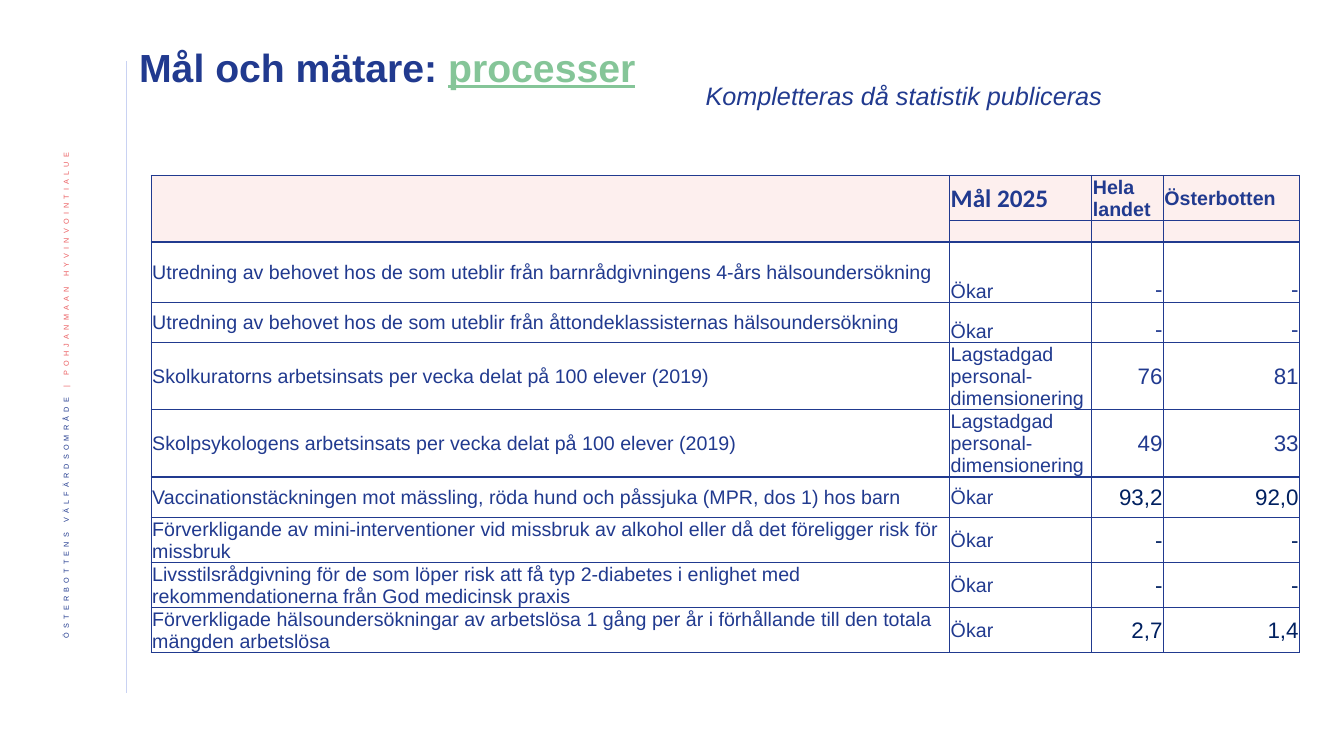
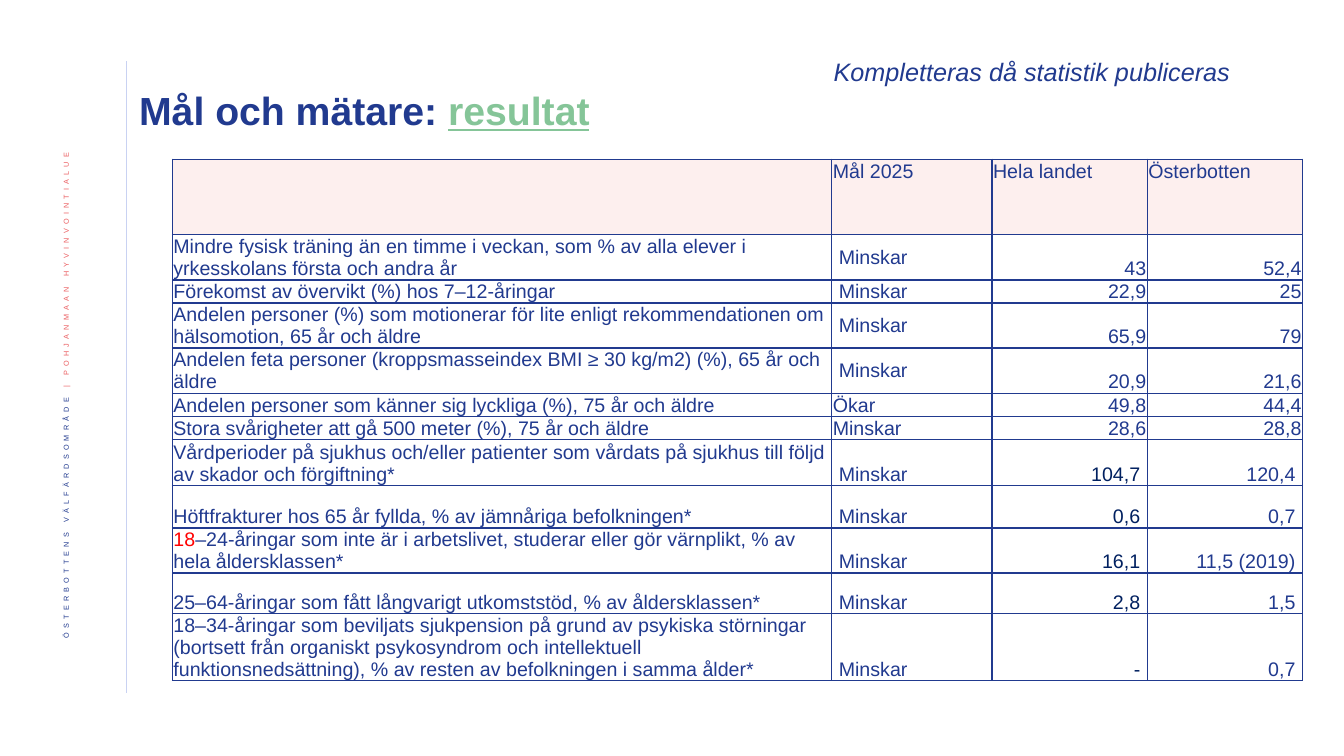
from dataclasses import dataclass
from typing import Any

from lxml import etree
from pptx import Presentation
from pptx.dml.color import RGBColor
from pptx.enum.shapes import MSO_CONNECTOR
from pptx.enum.text import MSO_ANCHOR, MSO_AUTO_SIZE, PP_ALIGN
from pptx.oxml.ns import qn
from pptx.util import Inches, Pt

LEFT, RIGHT = PP_ALIGN.LEFT, PP_ALIGN.RIGHT
TOP, MIDDLE, BOTTOM = MSO_ANCHOR.TOP, MSO_ANCHOR.MIDDLE, MSO_ANCHOR.BOTTOM
STRAIGHT = MSO_CONNECTOR.STRAIGHT
FIXED_SIZE = MSO_AUTO_SIZE.NONE

NAVY = RGBColor(0x21, 0x3A, 0x8F)
DARK = RGBColor(0x00, 0x20, 0x60)
GREEN = RGBColor(0x85, 0xC5, 0x98)
CORAL = RGBColor(0xEB, 0x5C, 0x5F)
RED = RGBColor(0xFF, 0x00, 0x00)
PINK = RGBColor(0xFD, 0xEF, 0xEE)
PALE_BLUE = RGBColor(0xC9, 0xD2, 0xF2)

FONT = "Arial"
RULE_X = 1.25
CELL_MARGIN = 0.01
PADDING = 0.06
BORDER_TAGS = ("a:lnL", "a:lnR", "a:lnT", "a:lnB")
NOTE = "Kompletteras då statistik publiceras"


@dataclass(frozen=True)
class Heading:
    text: str
    font: str = FONT
    size: int = 14
    bold: bool = False


@dataclass(frozen=True)
class Measure:
    height: float
    label: str
    goal: str
    values: tuple[str, str]
    goal_anchor: Any = MIDDLE
    value_anchor: Any = MIDDLE
    colours: tuple[RGBColor, RGBColor] = (NAVY, NAVY)
    goal_padding: float = 0
    value_padding: float = 0
    red_start: str = ""


@dataclass(frozen=True)
class MeasurePage:
    topic: str
    title_box: tuple[float, float, float, float]
    note_at: tuple[float, float]
    table_at: tuple[float, float]
    columns: tuple[float, ...]
    header_rows: tuple[float, ...]
    header_anchor: Any
    label_anchor: Any
    value_size: int
    headings: tuple[Heading, ...]
    measures: tuple[Measure, ...]


def dashes(height: float, label: str, anchor: Any, colour: RGBColor) -> Measure:
    """A process measure that has no statistics yet."""
    return Measure(height, label, "Ökar", ("-", "-"), anchor, anchor, (colour, colour))


def falling(height: float, label: str, *values: str) -> Measure:
    """A result measure from the surveys, meant to fall."""
    return Measure(height, label, "Minskar", values, MIDDLE, BOTTOM, goal_padding=PADDING)


def padded(height: float, label: str, *values: str, red_start: str = "") -> Measure:
    """A result measure from the registers, with padded figures."""
    return Measure(height, label, "Minskar", values, BOTTOM, BOTTOM, (DARK, NAVY),
                   PADDING, PADDING, red_start)


PROCESSES = MeasurePage(
    topic="processer",
    title_box=(1.28, 0.43, 5.61, 1.04),
    note_at=(6.9, 0.75),
    table_at=(1.5, 1.74),
    columns=(7.92, 1.41, 0.71, 1.35),
    header_rows=(0.45, 0.21),
    header_anchor=MIDDLE,
    label_anchor=MIDDLE,
    value_size=16,
    headings=(Heading("Mål 2025", "Calibri", 18, True),
              Heading("Hela landet", bold=True),
              Heading("Österbotten", bold=True)),
    measures=(
        dashes(0.6, "Utredning av behovet hos de som uteblir från barnrådgivningens "
               "4-års hälsoundersökning", BOTTOM, NAVY),
        dashes(0.4, "Utredning av behovet hos de som uteblir från åttondeklassisternas "
               "hälsoundersökning", BOTTOM, NAVY),
        Measure(0.66, "Skolkuratorns arbetsinsats per vecka delat på 100 elever (2019)",
                "Lagstadgad personal-dimensionering", ("76", "81")),
        Measure(0.66, "Skolpsykologens arbetsinsats per vecka delat på 100 elever (2019)",
                "Lagstadgad personal-dimensionering", ("49", "33")),
        Measure(0.4, "Vaccinationstäckningen mot mässling, röda hund och påssjuka "
                "(MPR, dos 1) hos barn", "Ökar", ("93,2", "92,0"), colours=(DARK, DARK)),
        dashes(0.44, "Förverkligande av mini-interventioner vid missbruk av alkohol "
               "eller då det föreligger risk för missbruk", MIDDLE, DARK),
        dashes(0.44, "Livsstilsrådgivning för de som löper risk att få typ 2-diabetes "
               "i enlighet med rekommendationerna från God medicinsk praxis", MIDDLE, DARK),
        Measure(0.44, "Förverkligade hälsoundersökningar av arbetslösa 1 gång per år "
                "i förhållande till den totala mängden arbetslösa", "Ökar",
                ("2,7", "1,4"), colours=(DARK, DARK)),
    ),
)

RESULTS = MeasurePage(
    topic="resultat",
    title_box=(1.28, 0.86, 5.18, 1.03),
    note_at=(8.17, 0.51),
    table_at=(1.71, 1.58),
    columns=(6.54, 1.59, 1.54, 1.54),
    header_rows=(0.75,),
    header_anchor=TOP,
    label_anchor=BOTTOM,
    value_size=14,
    headings=(Heading("Mål 2025"), Heading("Hela landet"), Heading("Österbotten")),
    measures=(
        falling(0.44, "Mindre fysisk träning än en timme i veckan, som % av alla elever "
                "i yrkesskolans första och andra år", "43", "52,4"),
        falling(0.22, "Förekomst av övervikt (%) hos 7–12-åringar", "22,9", "25"),
        falling(0.44, "Andelen personer (%) som motionerar för lite enligt "
                "rekommendationen om hälsomotion, 65 år och äldre", "65,9", "79"),
        falling(0.44, "Andelen feta personer (kroppsmasseindex BMI ≥ 30 kg/m2) (%), "
                "65 år och äldre", "20,9", "21,6"),
        Measure(0.22, "Andelen personer som känner sig lyckliga (%), 75 år och äldre",
                "Ökar", ("49,8", "44,4"), MIDDLE, BOTTOM),
        Measure(0.22, "Stora svårigheter att gå 500 meter (%), 75 år och äldre",
                "Minskar", ("28,6", "28,8"), BOTTOM, BOTTOM),
        padded(0.46, "Vårdperioder på sjukhus och/eller patienter som vårdats på sjukhus "
               "till följd av skador och förgiftning*", "104,7", "120,4"),
        padded(0.42, "Höftfrakturer hos 65 år fyllda, % av jämnåriga befolkningen*",
               "0,6", "0,7"),
        padded(0.44, "–24-åringar som inte är i arbetslivet, studerar eller gör "
               "värnplikt, % av hela åldersklassen*", "16,1", "11,5 (2019)", red_start="18"),
        padded(0.4, "25–64-åringar som fått långvarigt utkomststöd, % av åldersklassen*",
               "2,8", "1,5"),
        padded(0.67, "18–34-åringar som beviljats sjukpension på grund av psykiska "
               "störningar (bortsett från organiskt psykosyndrom och intellektuell "
               "funktionsnedsättning), % av resten av befolkningen i samma ålder*",
               "-", "0,7"),
    ),
)


def add_span(para: Any, text: str, colour: RGBColor = NAVY, **formats: Any) -> Any:
    span = para.add_run()
    span.text = text
    for name, value in {"name": FONT, "bold": False, **formats}.items():
        setattr(span.font, name, value)
    span.font.color.rgb = colour
    return span


# Shared parts
def add_side_band(page: Any, layout: Any) -> None:
    """Draw the rule and the vertical name, then hand them to the layout."""
    rule = page.shapes.add_connector(STRAIGHT, Inches(RULE_X), Inches(0.61),
                                     Inches(RULE_X), Inches(6.88))
    rule.line.color.rgb = PALE_BLUE
    rule.line.width = Pt(0.5)
    etree.SubElement(rule._element.spPr, qn("a:effectLst"))

    box = page.shapes.add_textbox(*map(Inches, (0.42, 1.42, 0.52, 5.73)))
    frame = box.text_frame
    frame.word_wrap = True
    frame.vertical_anchor = MIDDLE
    frame._txBody.bodyPr.set("vert", "vert270")
    para = frame.paragraphs[0]
    para.alignment = RIGHT
    para.line_spacing = 0.9
    for text, colour in (("ÖSTERBOTTENS VÄLFÄRDSOMRÅDE ", NAVY),
                         ("| POHJANMAAN HYVINVOINTIALUE", CORAL)):
        span = add_span(para, text, colour, size=Pt(9))
        span.font._element.set("baseline", "30000")
        span.font._element.set("spc", "300")

    for shape in (rule, box):
        layout.shapes._spTree.append(shape._element)


def fill_title(page: Any, content: MeasurePage) -> None:
    title = page.shapes.title
    sides = ("left", "top", "width", "height")
    for side, length in zip(sides, content.title_box):
        setattr(title, side, Inches(length))
    frame = title.text_frame
    frame.auto_size = FIXED_SIZE
    frame.vertical_anchor = TOP
    para = frame.paragraphs[0]
    para.alignment = LEFT
    para.line_spacing = 0.9
    add_span(para, "Mål och mätare: ", size=Pt(28), bold=True)
    add_span(para, content.topic, GREEN, size=Pt(28), bold=True, underline=True)


def add_note(page: Any, content: MeasurePage) -> None:
    box = page.shapes.add_textbox(*map(Inches, (*content.note_at, 4.9, 0.4)))
    box.text_frame.word_wrap = True
    add_span(box.text_frame.paragraphs[0], NOTE, size=Pt(18), italic=True)


# Table
def style_cell(cell: Any, anchor: Any, header: bool = False,
               left: float = 0, right: float = 0) -> Any:
    """Set fill, margins and borders; return the cell's paragraph."""
    margins = {"margin_left": CELL_MARGIN + left, "margin_right": CELL_MARGIN + right,
               "margin_top": CELL_MARGIN, "margin_bottom": 0}
    for name, length in margins.items():
        setattr(cell, name, Inches(length))
    cell.vertical_anchor = anchor
    properties = cell._tc.get_or_add_tcPr()
    for tag in BORDER_TAGS:
        border = etree.SubElement(properties, qn(tag), w=str(Pt(1)))
        fill = etree.SubElement(border, qn("a:solidFill"))
        etree.SubElement(fill, qn("a:srgbClr"), val=str(NAVY))
    if header:
        cell.fill.solid()
        cell.fill.fore_color.rgb = PINK
    else:
        cell.fill.background()
    return cell.text_frame.paragraphs[0]


def fill_header(table: Any, content: MeasurePage) -> None:
    count = len(content.header_rows)
    for row in range(count):
        for column in range(len(content.columns)):
            para = style_cell(table.cell(row, column), content.header_anchor, header=True)
            if row == 0 and column > 0:
                heading = content.headings[column - 1]
                add_span(para, heading.text, name=heading.font,
                         size=Pt(heading.size), bold=heading.bold)
            else:
                etree.SubElement(para._p, qn("a:endParaRPr"), sz="1000")
    if count > 1:
        table.cell(0, 0).merge(table.cell(count - 1, 0))


def fill_measure(table: Any, row: int, measure: Measure, content: MeasurePage) -> None:
    para = style_cell(table.cell(row, 0), content.label_anchor)
    if measure.red_start:
        add_span(para, measure.red_start, RED, size=Pt(14))
    add_span(para, measure.label, size=Pt(14))

    para = style_cell(table.cell(row, 1), measure.goal_anchor, left=measure.goal_padding)
    add_span(para, measure.goal, size=Pt(14))

    for column, (value, colour) in enumerate(zip(measure.values, measure.colours), 2):
        para = style_cell(table.cell(row, column), measure.value_anchor,
                          right=measure.value_padding)
        para.alignment = RIGHT
        add_span(para, value, colour, size=Pt(content.value_size))


def add_measure_table(page: Any, content: MeasurePage) -> None:
    heights = [*content.header_rows, *(measure.height for measure in content.measures)]
    place = (*content.table_at, sum(content.columns), sum(heights))
    table = page.shapes.add_table(len(heights), len(content.columns),
                                  *map(Inches, place)).table
    table.first_row = table.horz_banding = False
    for column, width in zip(table.columns, content.columns):
        column.width = Inches(width)
    for row, height in zip(table.rows, heights):
        row.height = Inches(height)
    fill_header(table, content)
    for row, measure in enumerate(content.measures, len(content.header_rows)):
        fill_measure(table, row, measure, content)


def main() -> None:
    deck = Presentation()
    deck.slide_width, deck.slide_height = Inches(13.33), Inches(7.5)
    layout = deck.slide_layouts.get_by_name("Title Only")
    for number, content in enumerate((PROCESSES, RESULTS)):
        page = deck.slides.add_slide(layout)
        if number == 0:
            add_side_band(page, layout)
        fill_title(page, content)
        add_measure_table(page, content)
        add_note(page, content)
    deck.save("out.pptx")


if __name__ == "__main__":
    main()
